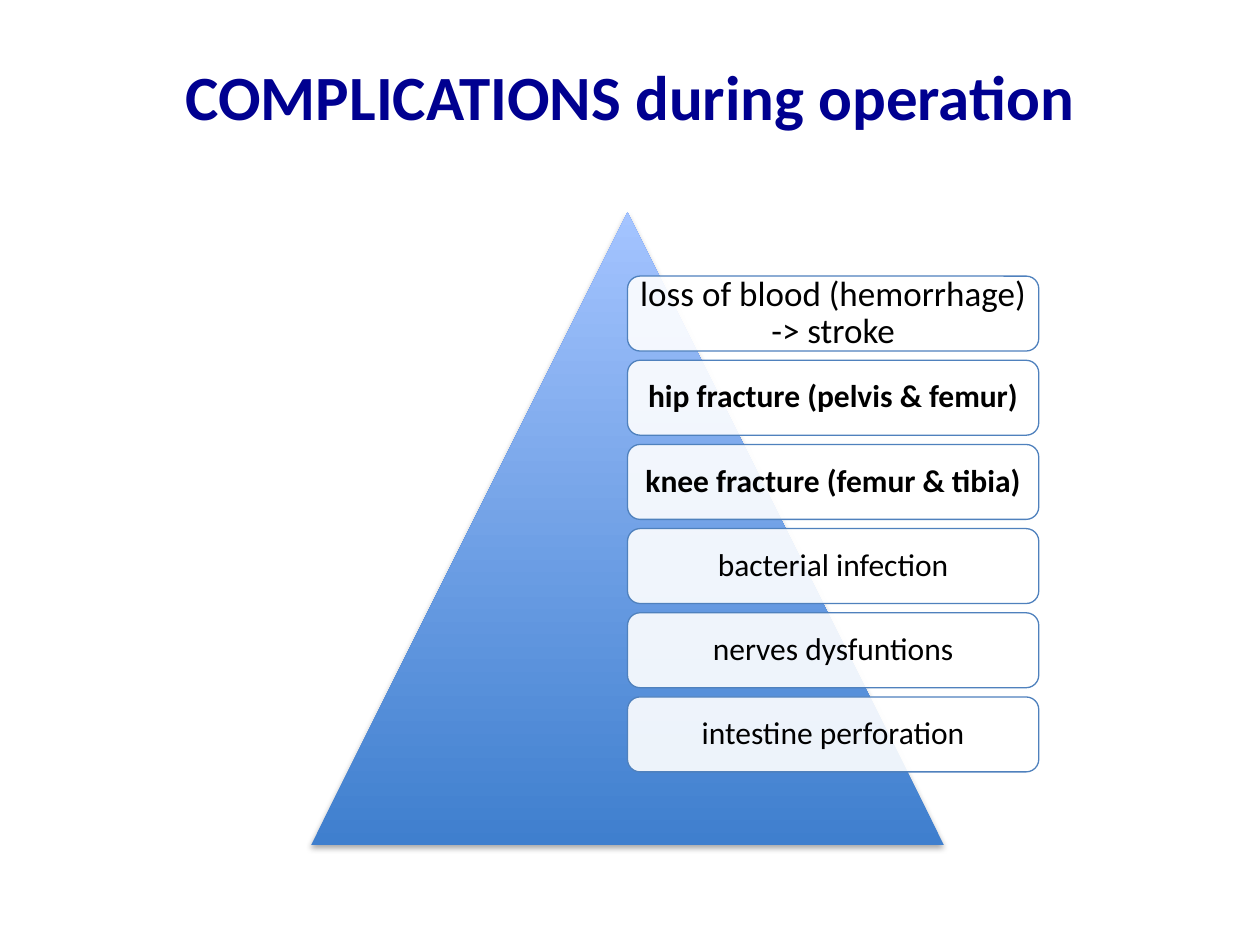
import pptx
import pptx.util
import pptx.dml.color
import pptx.enum.shapes
import pptx.enum.text
import pptx.oxml
import pptx.oxml.ns
import lxml.etree
from dataclasses import dataclass

Pt = pptx.util.Pt
RGB = pptx.dml.color.RGBColor.from_string
SHAPE = pptx.enum.shapes.MSO_SHAPE
qn = pptx.oxml.ns.qn


@dataclass(frozen=True)
class Theme:
    font: str = "Calibri"
    navy: str = "000090"
    black: str = "000000"
    white: str = "FFFFFF"
    outline: str = "4F81BD"
    deep_blue: str = "3F7FCE"
    pale_blue: str = "A4C4FF"
    title_size: int = 36
    lead_size: int = 20
    item_size: int = 18


theme = Theme()


def write_text(shape, text, *, size, color=theme.black, bold=False, inset=4.8, spacing=1.0):
    frame = shape.text_frame
    frame.word_wrap = True
    frame.vertical_anchor = pptx.enum.text.MSO_ANCHOR.MIDDLE
    frame.margin_left = frame.margin_right = Pt(inset)
    frame.margin_top = frame.margin_bottom = Pt(inset)
    paragraph = frame.paragraphs[0]
    paragraph.alignment = pptx.enum.text.PP_ALIGN.CENTER
    paragraph.line_spacing = spacing
    run = paragraph.add_run()
    run.text = text
    run.font.name = theme.font
    run.font.size = Pt(size)
    run.font.bold = bold
    run.font.color.rgb = RGB(color)


deck = pptx.Presentation()
deck.slide_width, deck.slide_height = Pt(720), Pt(540)
slide = deck.slides.add_slide(deck.slide_layouts[6])

title = slide.shapes.add_textbox(Pt(36), Pt(9.4), Pt(648), Pt(90))
write_text(title, "COMPLICATIONS during operation",
           size=theme.title_size, color=theme.navy, bold=True)

diagram = slide.shapes.add_group_shape()
pyramid = diagram.shapes.add_shape(
    SHAPE.ISOSCELES_TRIANGLE, Pt(177.8), Pt(121.4), Pt(361.6), Pt(361.6))
pyramid.line.fill.background()
pyramid.fill.gradient()
pyramid.fill.gradient_angle = 90
for stop, position, color in zip(pyramid.fill.gradient_stops, (0, 1),
                                 (theme.deep_blue, theme.pale_blue)):
    stop.position = position
    stop.color.rgb = RGB(color)

pyramid.shadow.inherit = False
effects = pyramid._element.spPr.find(qn("a:effectLst"))
shadow = lxml.etree.SubElement(
    effects, qn("a:outerShdw"), blurRad=str(Pt(3.1)), dist=str(Pt(1.8)),
    dir="5400000", rotWithShape="0")
shadow_color = lxml.etree.SubElement(shadow, qn("a:srgbClr"), val=theme.black)
lxml.etree.SubElement(shadow_color, qn("a:alpha"), val="35000")

complications = [
    ("loss of blood (hemorrhage) -> stroke", theme.lead_size, False),
    ("hip fracture (pelvis & femur)", theme.item_size, True),
    ("knee fracture (femur & tibia)", theme.item_size, True),
    ("bacterial infection", theme.item_size, False),
    ("nerves dysfuntions", theme.item_size, False),
    ("intestine perforation", theme.item_size, False),
]
first_top, step = 157.8, 48.1

for row, (complication, size, bold) in enumerate(complications):
    card = diagram.shapes.add_shape(
        SHAPE.ROUNDED_RECTANGLE, Pt(358.6), Pt(first_top + row * step), Pt(235), Pt(42.8))
    card.shadow.inherit = False
    card.fill.solid()
    card.fill.fore_color.rgb = RGB(theme.white)
    card_color = card._element.spPr.find(qn("a:solidFill")).find(qn("a:srgbClr"))
    lxml.etree.SubElement(card_color, qn("a:alpha"), val="90000")
    card.line.color.rgb = RGB(theme.outline)
    card.line.width = Pt(0.75)
    write_text(card, complication, size=size, bold=bold, spacing=0.9)

deck.save("out.pptx")
